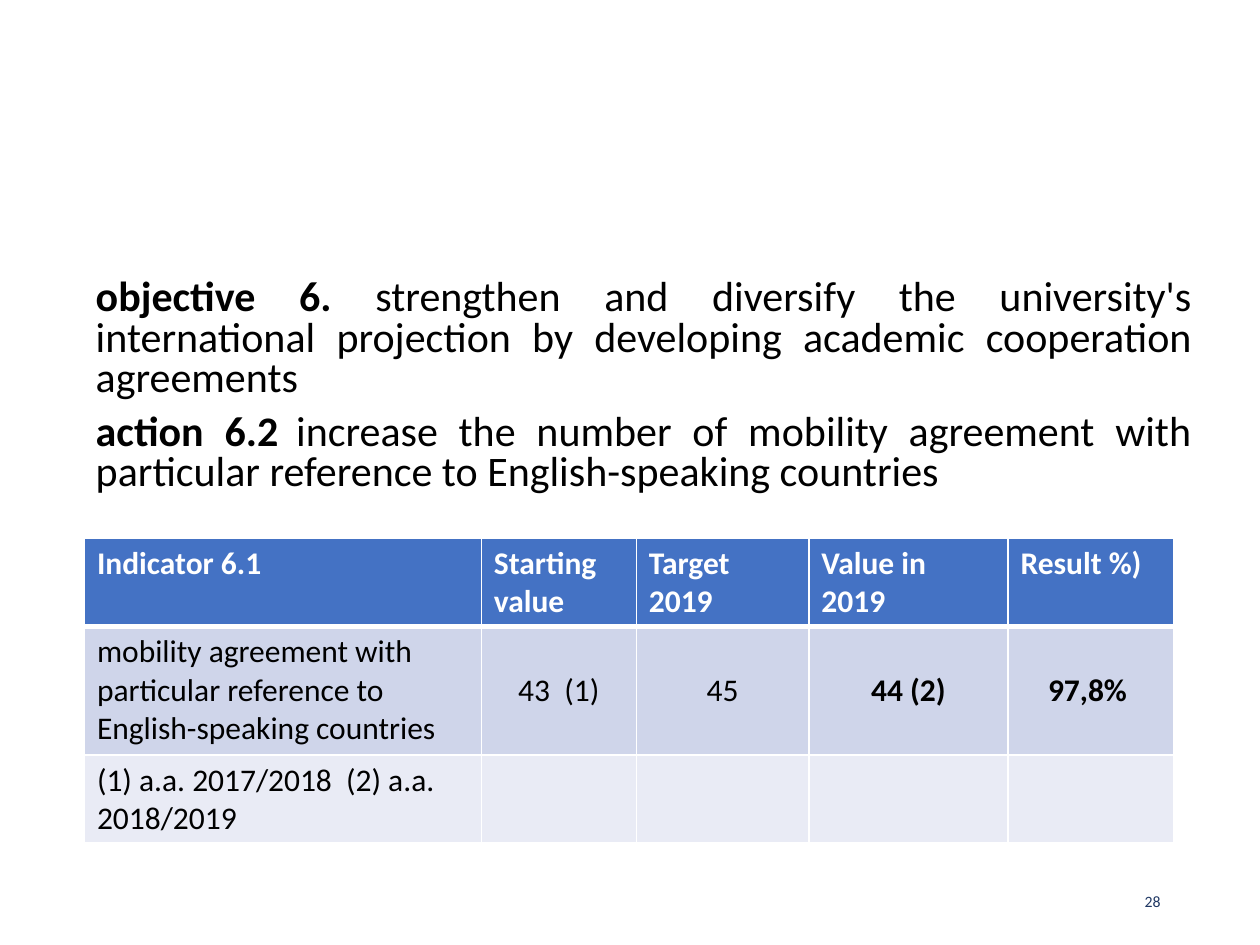
"""Build the slide on objective 6 and its mobility indicator."""
import pptx
import pptx.dml.color
import pptx.enum.text
import pptx.oxml
import pptx.oxml.ns
import pptx.util
from pptx.util import Inches

ALIGN = pptx.enum.text.PP_ALIGN
ANCHOR = pptx.enum.text.MSO_ANCHOR
HEAD = ["Indicator 6.1", "Starting value", "Target 2019", "Value in 2019", "Result %)"]
DATA = [
    "mobility agreement with particular reference to English-speaking countries",
    "43  (1)", "45", "44 (2)", "97,8% ",
]
NOTE = ["(1) a.a. 2017/2018  (2) a.a. 2018/2019", "", "", "", ""]
FILLS = ["4472C4", "CFD5EA", "E9EBF5"]
WIDTHS = [3.15, 1.23, 1.37, 1.58, 1.32]
HEIGHTS = [0.7, 1.02, 0.7]
GOALS = [
    ("objective 6.", " strengthen and diversify the university's international "
     "projection by developing academic cooperation agreements"),
    ("action 6.2", "\tincrease the number of mobility agreement with "
     "particular reference to English-speaking countries"),
]


def color(code):
    """Turn a hex string into a colour."""
    return pptx.dml.color.RGBColor.from_string(code)


def add_run(para, text, size, code="000000", bold=False):
    """Add one formatted run to a paragraph."""
    run = para.add_run()
    run.text = text
    run.font.name = "Calibri"
    run.font.size = pptx.util.Pt(size)
    run.font.bold = bold
    run.font.color.rgb = color(code)


def add_tab(para, inches):
    """Give a paragraph one left tab stop."""
    space = pptx.oxml.ns.nsdecls("a")
    stops = pptx.oxml.parse_xml(
        f'<a:tabLst {space}><a:tab pos="{Inches(inches)}" algn="l"/></a:tabLst>')
    para._p.get_or_add_pPr().append(stops)


def add_goals(slide):
    """Fill the subtitle with the objective and the action."""
    body = slide.placeholders[1]
    body.left, body.top = Inches(0.66), Inches(2.17)
    body.width, body.height = Inches(8.9), Inches(1.81)
    frame = body.text_frame
    frame.word_wrap = True
    frame.auto_size = pptx.enum.text.MSO_AUTO_SIZE.NONE
    frame.vertical_anchor = ANCHOR.TOP
    for row, (label, text) in enumerate(GOALS):
        para = frame.add_paragraph() if row else frame.paragraphs[0]
        para.alignment = ALIGN.JUSTIFY
        para.line_spacing = 0.8
        para.space_before = pptx.util.Pt(7.5 if row else 0)
        if "\t" in text:
            add_tab(para, 2.13)
        add_run(para, label, 24, bold=True)
        add_run(para, text, 24)


def add_edges(cell, row):
    """Draw white borders, thick below the header row."""
    space = pptx.oxml.ns.nsdecls("a")
    for side in "LRTB":
        thick = (side, row) in (("B", 0), ("T", 1))
        width = pptx.util.Pt(3 if thick else 1)
        cell._tc.get_or_add_tcPr().append(pptx.oxml.parse_xml(
            f'<a:ln{side} {space} w="{width}"><a:solidFill>'
            f'<a:srgbClr val="FFFFFF"/></a:solidFill></a:ln{side}>'))


def fill_cell(cell, text, row, col):
    """Style one table cell and write its text."""
    add_edges(cell, row)
    cell.fill.solid()
    cell.fill.fore_color.rgb = color(FILLS[row])
    cell.vertical_anchor = ANCHOR.MIDDLE if row else ANCHOR.TOP
    para = cell.text_frame.paragraphs[0]
    para.alignment = ALIGN.CENTER if row and col else ALIGN.LEFT
    if text:
        bold = row == 0 or (row == 1 and col > 2)
        add_run(para, text, 18, "000000" if row else "FFFFFF", bold)


def add_grid(slide):
    """Add the indicator table."""
    rows = [HEAD, DATA, NOTE]
    grid = slide.shapes.add_table(
        len(rows), len(HEAD), Inches(0.67), Inches(4.27),
        Inches(sum(WIDTHS)), Inches(sum(HEIGHTS))).table
    for col, width in enumerate(WIDTHS):
        grid.columns[col].width = Inches(width)
    for row, texts in enumerate(rows):
        grid.rows[row].height = Inches(HEIGHTS[row])
        for col, text in enumerate(texts):
            fill_cell(grid.cell(row, col), text, row, col)


def add_number(slide):
    """Add the page number."""
    box = slide.shapes.add_textbox(
        Inches(7.06), Inches(6.95), Inches(2.25), Inches(0.4))
    frame = box.text_frame
    frame.word_wrap = True
    frame.vertical_anchor = ANCHOR.MIDDLE
    para = frame.paragraphs[0]
    para.alignment = ALIGN.RIGHT
    add_run(para, "28", 9, "203864")


def main():
    """Build and save the slide."""
    deck = pptx.Presentation()
    deck.slide_width, deck.slide_height = Inches(10), Inches(7.5)
    slide = deck.slides.add_slide(deck.slide_layouts[0])
    title = slide.shapes.title.element
    title.getparent().remove(title)
    add_number(slide)
    add_goals(slide)
    add_grid(slide)
    deck.save("out.pptx")


if __name__ == "__main__":
    main()
